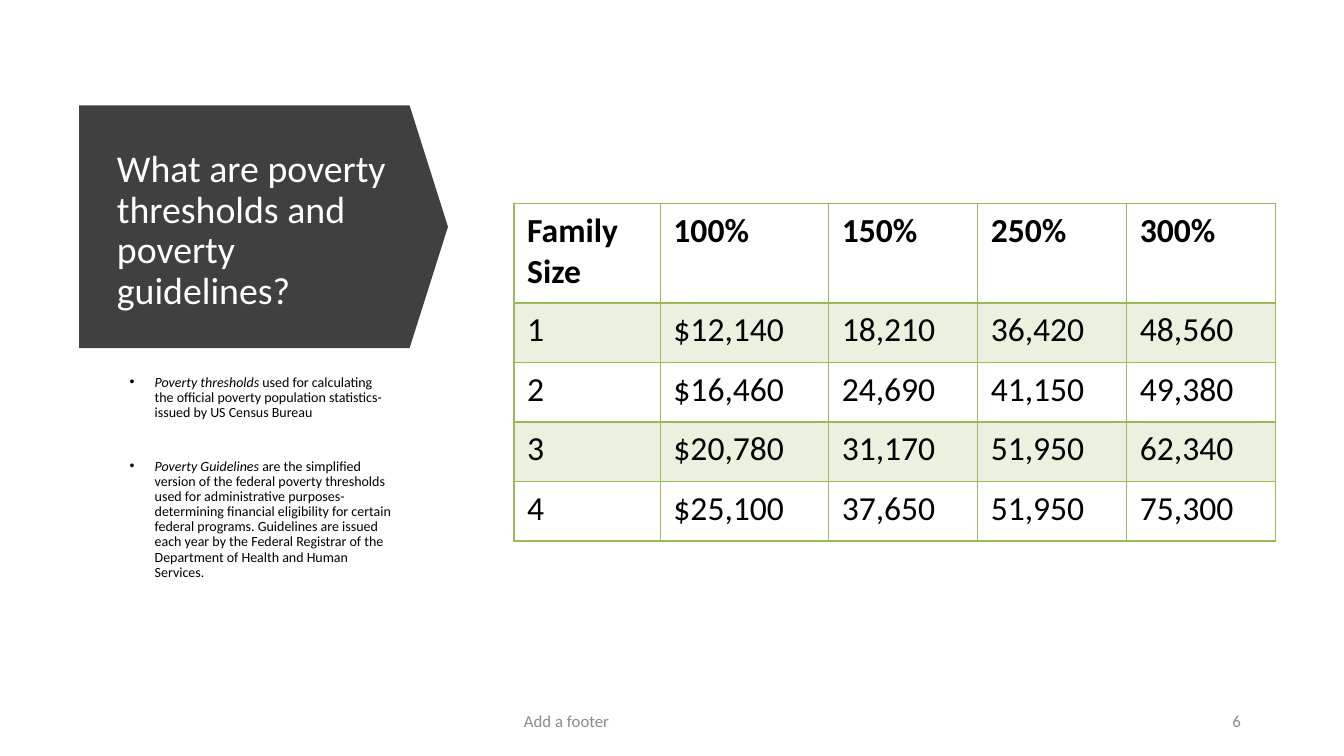
from pptx import Presentation
from pptx.dml.color import RGBColor
from pptx.enum.shapes import MSO_SHAPE as SHAPE
from pptx.enum.text import MSO_ANCHOR as ANCHOR, MSO_AUTO_SIZE as AUTOSIZE, PP_ALIGN as ALIGN
from pptx.oxml.ns import qn
from pptx.util import Pt
from lxml.etree import SubElement

TITLE = "What are poverty thresholds and poverty guidelines?"
DEFINITIONS = [
    ("Poverty thresholds ",
     "used for calculating the official poverty population statistics- "
     "issued by US Census Bureau"),
    ("Poverty Guidelines ",
     "are the simplified version of the federal poverty thresholds used for "
     "administrative purposes- determining financial eligibility for certain "
     "federal programs. Guidelines are issued each year by the Federal Registrar "
     "of the Department of Health and Human Services."),
]
INCOME_ROWS = [
    ("Family Size", "100%", "150%", "250%", "300%"),
    ("1", "$12,140", "18,210", "36,420", "48,560"),
    ("2", "$16,460", "24,690", "41,150", "49,380"),
    ("3", "$20,780", "31,170", "51,950", "62,340"),
    ("4", "$25,100", "37,650", "51,950", "75,300"),
]
FOOTERS = [
    ("Add a footer", 367.2, 430, ALIGN.LEFT),
    ("6", 812.9, 80.6, ALIGN.RIGHT),
]
COLUMN_WIDTHS = [104.5, 120.2, 106.5, 106.5, 106.5]
HEADER_HEIGHT, ROW_HEIGHT = 71.3, 42.5
COLORS = {"arrow": "404040", "title": "FFFFFF", "text": "000000", "footer": "8C8C8C",
          "border": "9BBB59", "band": "EBF1DE"}
FONT = "Calibri"


def rgb(name):
    return RGBColor.from_string(COLORS[name])


def style(r, size, color, bold=False, italic=False):
    f = r.font
    f.name, f.size, f.bold, f.italic = FONT, Pt(size), bold, italic
    f.color.rgb = rgb(color)


def place(sp, left, top, width, height):
    sp.left, sp.top, sp.width, sp.height = Pt(left), Pt(top), Pt(width), Pt(height)


def set_bullet(p, margin, indent):
    pPr = p._p.get_or_add_pPr()
    pPr.set("marL", str(Pt(margin)))
    pPr.set("indent", str(Pt(indent)))
    SubElement(pPr, qn("a:buFont"), typeface="Arial")
    SubElement(pPr, qn("a:buChar"), char="•")


def set_borders(cell, widths):
    tcPr = cell._tc.get_or_add_tcPr()
    for side, width in widths.items():
        ln = SubElement(tcPr, qn(f"a:ln{side}"), w=str(Pt(width)))
        fill = SubElement(ln, qn("a:solidFill"))
        SubElement(fill, qn("a:srgbClr"), val=COLORS["border"])


def add_title(slide):
    sp = slide.shapes.title
    place(sp, 76.3, 95, 210.2, 140.4)
    tf = sp.text_frame
    tf.text = TITLE
    tf.word_wrap, tf.auto_size, tf.vertical_anchor = True, AUTOSIZE.NONE, ANCHOR.MIDDLE
    p = tf.paragraphs[0]
    p.alignment, p.line_spacing = ALIGN.LEFT, 0.9
    style(p.runs[0], 27, "title")


def add_arrow(slide):
    sp = slide.shapes.add_shape(SHAPE.DOWN_ARROW, Pt(101.5), Pt(30.2), Pt(173.5), Pt(263.5))
    sp.rotation = 270
    sp.adjustments[0], sp.adjustments[1] = 1, 0.158
    sp.shadow.inherit = False
    sp.fill.solid()
    sp.fill.fore_color.rgb = rgb("arrow")
    sp.line.fill.background()
    slide.shapes._spTree.insert(2, sp._element)


def add_definitions(slide):
    sp = slide.placeholders[1]
    place(sp, 76.3, 264.2, 210.2, 190.8)
    tf = sp.text_frame
    tf.word_wrap, tf.auto_size = True, AUTOSIZE.NONE
    for i, (term, meaning) in enumerate(DEFINITIONS):
        p = tf.add_paragraph() if i else tf.paragraphs[0]
        p.line_spacing = 0.9
        p.space_before = Pt(27.6 if i else 0)
        set_bullet(p, 27, -18)
        for text, italic in ((term, True), (meaning, False)):
            r = p.add_run()
            r.text = text
            style(r, 10, "text", italic=italic)


def add_income_table(slide):
    heights = [HEADER_HEIGHT] + [ROW_HEIGHT] * (len(INCOME_ROWS) - 1)
    frame = slide.shapes.add_table(len(heights), len(COLUMN_WIDTHS), Pt(370), Pt(145.1),
                                   Pt(sum(COLUMN_WIDTHS)), Pt(sum(heights)))
    frame.left = Pt(367.2)
    table = frame.table
    for column, width in zip(table.columns, COLUMN_WIDTHS):
        column.width = Pt(width)
    for i, values in enumerate(INCOME_ROWS):
        table.rows[i].height = Pt(heights[i])
        for j, value in enumerate(values):
            cell = table.cell(i, j)
            cell.text = value
            style(cell.text_frame.paragraphs[0].runs[0], 24, "text", bold=i == 0)
            cell.margin_left = cell.margin_right = Pt(9.4)
            cell.margin_top = cell.margin_bottom = Pt(5)
            set_borders(cell, {"L": 1, "R": 1, "T": 2 if i == 1 else 1, "B": 2 if i == 0 else 1})
            if i % 2:
                cell.fill.solid()
                cell.fill.fore_color.rgb = rgb("band")
            else:
                cell.fill.background()


def add_footers(slide):
    for text, left, width, align in FOOTERS:
        tf = slide.shapes.add_textbox(Pt(left), Pt(500.4), Pt(width), Pt(28.8)).text_frame
        tf.text = text
        tf.word_wrap, tf.vertical_anchor = True, ANCHOR.MIDDLE
        p = tf.paragraphs[0]
        p.alignment, p.space_after = align, Pt(6)
        style(p.runs[0], 12, "footer")


def main():
    prs = Presentation()
    prs.slide_width, prs.slide_height = Pt(960), Pt(540)
    slide = prs.slides.add_slide(prs.slide_layouts[1])
    add_title(slide)
    add_arrow(slide)
    add_definitions(slide)
    add_income_table(slide)
    add_footers(slide)
    prs.save("out.pptx")


if __name__ == "__main__":
    main()
